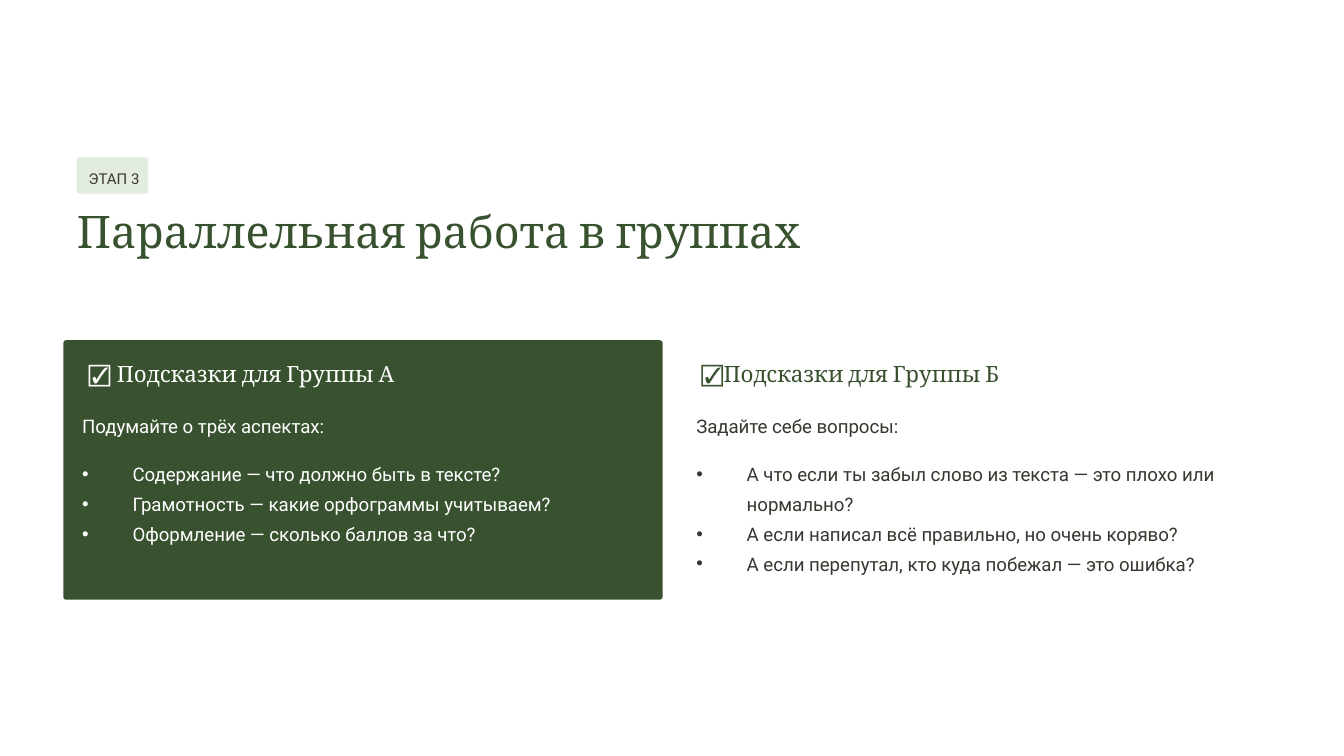
from lxml.etree import SubElement
from pptx import Presentation
from pptx.dml.color import RGBColor
from pptx.enum.shapes import MSO_SHAPE
from pptx.enum.text import MSO_ANCHOR, MSO_AUTO_SIZE, PP_ALIGN
from pptx.oxml.ns import qn
from pptx.util import Pt

COLORS = {"green": "38512F", "pale": "E2ECDF", "ink": "3A3630", "white": "FFFFFF"}
STAGE = "ЭТАП 3"
TITLE = "Параллельная работа в группах"
GROUPS = [
    {
        "left": 44,
        "heading": [(" ☑ ", "Arial", True), ("Подсказки для Группы А", "Cambria", False)],
        "heading_color": "white",
        "text_color": "white",
        "intro": "Подумайте о трёх аспектах:",
        "hints": [
            "Содержание — что должно быть в тексте?",
            "Грамотность — какие орфограммы учитываем?",
            "Оформление — сколько баллов за что?",
        ],
    },
    {
        "left": 373,
        "heading": [
            (" ", "Cambria", False),
            ("☑", "Roboto", False),
            ("Подсказки для Группы Б", "Cambria", False),
        ],
        "heading_color": "green",
        "text_color": "ink",
        "intro": "Задайте себе вопросы:",
        "hints": [
            "А что если ты забыл слово из текста — это плохо или нормально?",
            "А если написал всё правильно, но очень коряво?",
            "А если перепутал, кто куда побежал — это ошибка?",
        ],
    },
]
HEADING_TOP, INTRO_TOP, HINTS_TOP = 192.4, 218.2, 244.1
COLUMN_WIDTH = 306
BULLET_INDENT = 27


def color(name):
    return RGBColor.from_string(COLORS[name])


def place(shape, left, top, width, height):
    shape.left, shape.top, shape.width, shape.height = map(Pt, (left, top, width, height))
    frame = shape.text_frame
    frame.margin_left = frame.margin_right = frame.margin_top = frame.margin_bottom = 0
    frame.word_wrap = True
    frame.auto_size = MSO_AUTO_SIZE.NONE
    frame.vertical_anchor = MSO_ANCHOR.TOP
    return frame


def add_box(slide, *bounds):
    return place(slide.shapes.add_textbox(0, 0, 0, 0), *bounds)


def space(paragraph, line_spacing):
    paragraph.alignment = PP_ALIGN.LEFT
    paragraph.line_spacing = line_spacing
    paragraph.space_before = Pt(0)


def style(font, name, size, color_name, bold=False):
    font.name = name
    font.size = Pt(size)
    font.bold = bold
    font.color.rgb = color(color_name)


def write(frame, lines, name, size, color_name, line_spacing=1.33, bulleted=False):
    frame.text = "\n".join(lines)
    for paragraph in frame.paragraphs:
        if bulleted:
            properties = paragraph._p.get_or_add_pPr()
            properties.set("marL", str(Pt(BULLET_INDENT)))
            properties.set("indent", str(-Pt(BULLET_INDENT)))
            SubElement(properties, qn("a:buChar"), char="•")
        space(paragraph, line_spacing)
        style(paragraph.font, name, size, color_name)


def add_panel(slide, bounds, radius, fill):
    panel = slide.shapes.add_shape(MSO_SHAPE.ROUNDED_RECTANGLE, *map(Pt, bounds))
    panel.adjustments[0] = radius
    panel.fill.solid()
    panel.fill.fore_color.rgb = color(fill)
    panel.line.fill.background()
    panel.shadow.inherit = False
    slide.shapes._spTree.insert(2, panel._element)


def add_group(slide, group, heading_holder, hints_holder):
    left = group["left"]
    heading = place(heading_holder, left, HEADING_TOP, 199, 16).paragraphs[0]
    space(heading, 1.04)
    for text, name, bold in group["heading"]:
        run = heading.add_run()
        run.text = text
        style(run.font, name, 12, group["heading_color"], bold)
    intro = add_box(slide, left, INTRO_TOP, COLUMN_WIDTH, 16.6)
    write(intro, [group["intro"]], "Roboto", 10, group["text_color"])
    hints = place(hints_holder, left, HINTS_TOP, COLUMN_WIDTH, 73.5)
    write(hints, group["hints"], "Roboto", 10, group["text_color"], bulleted=True)


def main():
    presentation = Presentation()
    presentation.slide_width, presentation.slide_height = Pt(720), Pt(405)
    slide = presentation.slides.add_slide(presentation.slide_layouts.get_by_name("Comparison"))
    holders = {holder.placeholder_format.idx: holder for holder in slide.placeholders}
    add_panel(slide, (34, 182.3, 321, 139), 0.011, "green")
    add_panel(slide, (41.2, 84.3, 38.2, 19.5), 0.064, "pale")
    write(add_box(slide, 47.5, 87.8, 62, 13), [STAGE], "Roboto", 8, "ink")
    write(place(holders[0], 41.2, 108, 407, 30), [TITLE], "Cambria", 24, "green", 1.04)
    for index, group in enumerate(GROUPS):
        add_group(slide, group, holders[1 + 2 * index], holders[2 + 2 * index])
    presentation.save("out.pptx")


if __name__ == "__main__":
    main()
